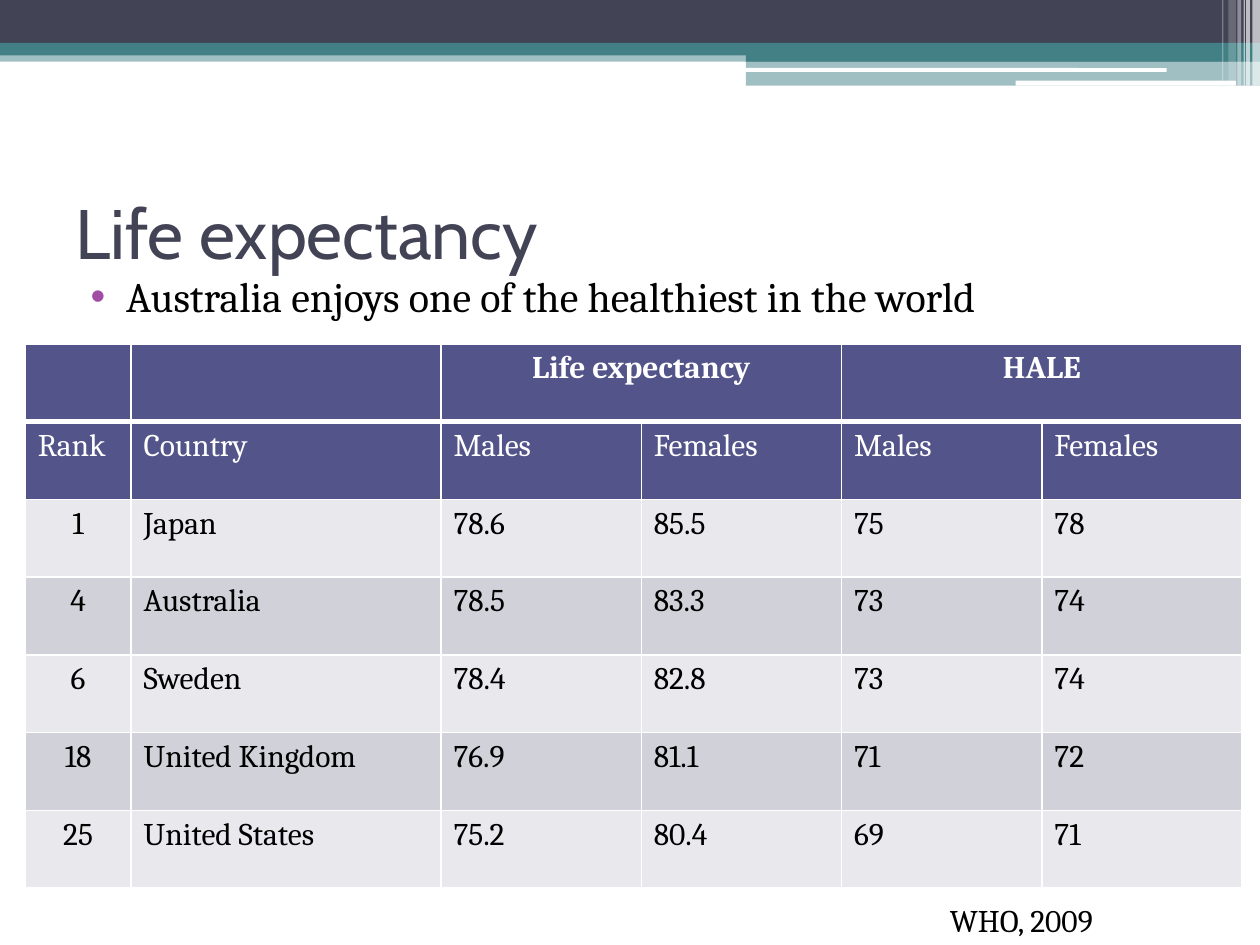
"""Build the life expectancy slide with its banner, bullet and table."""
from lxml.etree import SubElement
from pptx import Presentation
from pptx.dml.color import RGBColor
from pptx.enum.shapes import MSO_SHAPE
from pptx.enum.text import MSO_ANCHOR, MSO_AUTO_SIZE, PP_ALIGN
from pptx.oxml.ns import qn
from pptx.util import Inches, Pt

WHITE = RGBColor(0xFF, 0xFF, 0xFF)
BLACK = RGBColor(0, 0, 0)
SLATE = RGBColor(0x42, 0x44, 0x56)
TEAL = RGBColor(0x43, 0x80, 0x86)
PURPLE = RGBColor(0xA0, 0x4D, 0xA3)
INDIGO = RGBColor(0x53, 0x54, 0x8A)
LIGHT_BAND = RGBColor(0xE9, 0xE9, 0xED)
DARK_BAND = RGBColor(0xD1, 0xD1, 0xDA)

BANNER_BARS = [
    (0, 0.4, 10, 0.09, TEAL, 50),
    (0, 0, 10, 0.34, SLATE, 100),
    (0, 0.34, 10, 0.1, TEAL, 100),
    (5.92, 0.39, 4.08, 0.1, TEAL, 100),
    (5.92, 0.48, 4.08, 0.2, TEAL, 50),
]
BANNER_LINES = [(5.91, 0.54, 3.35, 0.03), (8.06, 0.64, 1.75, 0.04)]
BANNER_STRIPES = [
    (9.94, 0.06, 0.68, 65),
    (9.89, 0.03, 0.68, 65),
    (9.87, 0.01, 0.68, 60),
    (9.82, 0.03, 0.68, 40),
    (9.75, 0.06, 0.64, 20),
    (9.7, 0.01, 0.64, 30),
]
COLUMN_WIDTHS = [0.84, 2.46] + [1.59] * 4
TABLE_ROWS = [
    ["", "", "Life expectancy", "", "HALE", ""],
    ["Rank", "Country", "Males", "Females", "Males", "Females"],
    ["1", "Japan", "78.6", "85.5", "75", "78"],
    ["4", "Australia", "78.5", "83.3", "73", "74"],
    ["6", "Sweden", "78.4", "82.8", "73", "74"],
    ["18", "United Kingdom", "76.9", "81.1", "71", "72"],
    ["25", "United States", "75.2", "80.4", "69", "71"],
]


class SlideBuilder:
    """Hold the text style and the current slide."""

    heading_font = "Cabin"
    body_font = "Cambria"
    table_size = 18

    def __init__(self, slide):
        self.slide = slide

    def place(self, shape, left, top, width, height):
        shape.left, shape.top = Inches(left), Inches(top)
        shape.width, shape.height = Inches(width), Inches(height)

    def set_text(self, text_frame, text, size, color, font=body_font, bold=False, align=PP_ALIGN.LEFT):
        text_frame.text = text
        paragraph = text_frame.paragraphs[0]
        paragraph.alignment = align
        for run in paragraph.runs:
            run.font.name = font
            run.font.size = Pt(size)
            run.font.bold = bold
            run.font.color.rgb = color
        return paragraph

    def bar(self, left, top, width, height, color, opacity=100, preset=MSO_SHAPE.RECTANGLE):
        shape = self.slide.shapes.add_shape(
            preset, Inches(left), Inches(top), Inches(width), Inches(height))
        shape.shadow.inherit = False
        shape.fill.solid()
        shape.fill.fore_color.rgb = color
        shape.line.fill.background()
        if opacity < 100:
            color_element = shape.element.spPr.find(qn("a:solidFill"))[0]
            SubElement(color_element, qn("a:alpha"), val=str(opacity * 1000))

    def banner(self):
        for bar in BANNER_BARS:
            self.bar(*bar)
        for line in BANNER_LINES:
            self.bar(*line, WHITE, preset=MSO_SHAPE.ROUNDED_RECTANGLE)
        for left, width, height, opacity in BANNER_STRIPES:
            self.bar(left, 0, width, height, WHITE, opacity)

    def title(self, text):
        title = self.slide.shapes.title
        self.place(title, 0.5, 1.25, 9, 1.17)
        title.text_frame.vertical_anchor = MSO_ANCHOR.MIDDLE
        title.text_frame.auto_size = MSO_AUTO_SIZE.NONE
        self.set_text(title.text_frame, text, 40, SLATE, self.heading_font)

    def bullet(self, text):
        body = self.slide.placeholders[1]
        self.place(body, 0.5, 2.1, 9, 1.05)
        body.text_frame.auto_size = MSO_AUTO_SIZE.NONE
        paragraph = self.set_text(body.text_frame, text, 24, BLACK)
        paragraph.space_before = Pt(3)
        properties = paragraph._p.get_or_add_pPr()
        properties.set("marL", str(Inches(0.4)))
        properties.set("indent", str(Inches(-0.28)))
        bullet_color = SubElement(properties, qn("a:buClr"))
        SubElement(bullet_color, qn("a:srgbClr"), val=str(PURPLE))
        SubElement(properties, qn("a:buFont"), typeface="Arial")
        SubElement(properties, qn("a:buChar"), char="•")

    def cell_borders(self, cell, top, bottom):
        properties = cell._tc.get_or_add_tcPr()
        for side, width in (("L", 1), ("R", 1), ("T", top), ("B", bottom)):
            line = SubElement(properties, qn(f"a:ln{side}"), w=str(Pt(width)))
            fill = SubElement(line, qn("a:solidFill"))
            SubElement(fill, qn("a:srgbClr"), val=str(WHITE))

    def table(self, rows, column_widths):
        table = self.slide.shapes.add_table(
            len(rows), len(column_widths), Inches(0.2), Inches(2.73),
            Inches(9.65), Inches(4.32)).table
        for column, width in zip(table.columns, column_widths):
            column.width = Inches(width)
        for row_index, values in enumerate(rows):
            is_header = row_index < 2
            band = LIGHT_BAND if row_index % 2 == 0 else DARK_BAND
            for column_index, value in enumerate(values):
                cell = table.cell(row_index, column_index)
                centered = row_index == 0 or (column_index == 0 and not is_header)
                self.set_text(
                    cell.text_frame, value, self.table_size,
                    WHITE if is_header else BLACK, bold=row_index == 0,
                    align=PP_ALIGN.CENTER if centered else PP_ALIGN.LEFT)
                self.cell_borders(
                    cell, 3 if row_index == 1 else 1, 3 if row_index == 0 else 1)
                cell.fill.solid()
                cell.fill.fore_color.rgb = INDIGO if is_header else band
        for first_column in (2, 4):
            table.cell(0, first_column).merge(table.cell(0, first_column + 1))

    def source_note(self, text):
        box = self.slide.shapes.add_textbox(
            Inches(7.44), Inches(7.1), Inches(2.28), Inches(0.4))
        box.text_frame.word_wrap = True
        box.text_frame.auto_size = MSO_AUTO_SIZE.SHAPE_TO_FIT_TEXT
        self.set_text(box.text_frame, text, self.table_size, BLACK)


def main():
    presentation = Presentation()
    presentation.slide_width = Inches(10)
    presentation.slide_height = Inches(7.5)
    builder = SlideBuilder(presentation.slides.add_slide(presentation.slide_layouts[1]))
    builder.banner()
    builder.title("Life expectancy")
    builder.bullet("Australia enjoys one of the healthiest in the world")
    builder.table(TABLE_ROWS, COLUMN_WIDTHS)
    builder.source_note("WHO, 2009")
    presentation.save("out.pptx")


if __name__ == "__main__":
    main()
